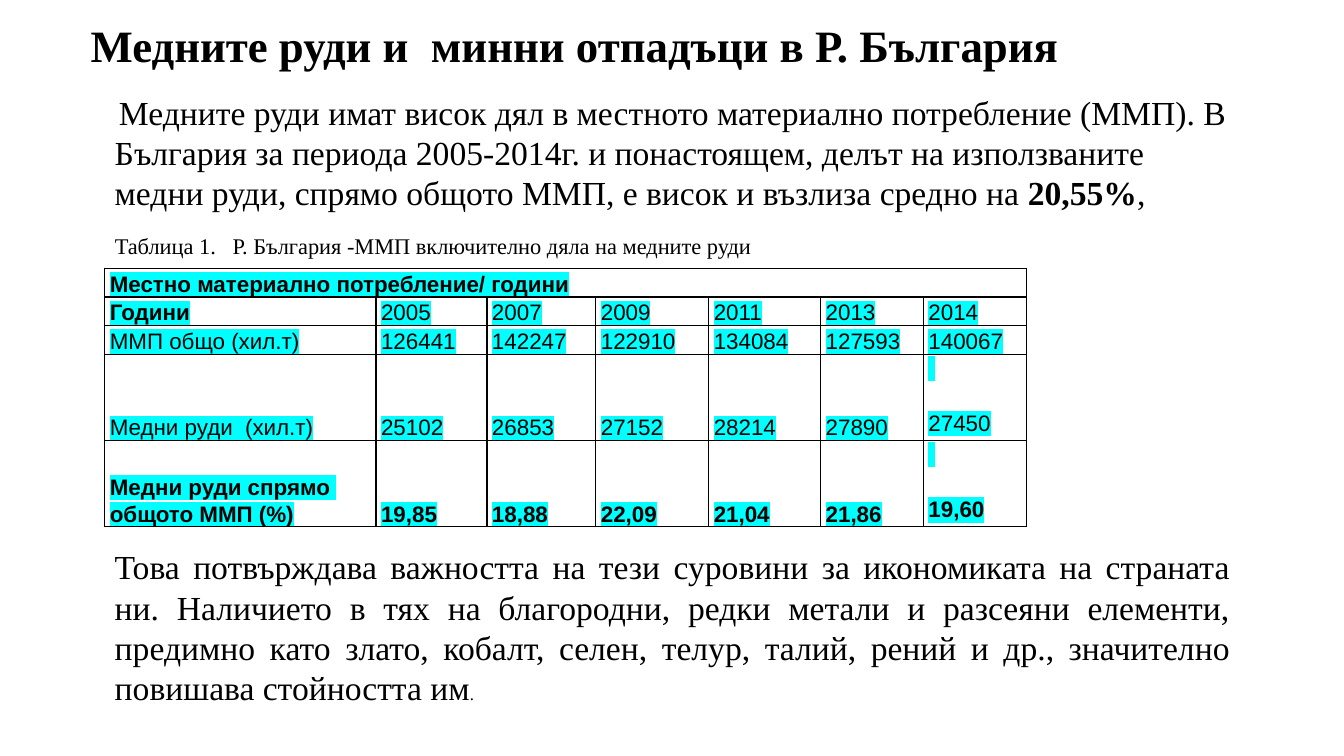
import pptx
import pptx.util
import pptx.dml.color
import pptx.enum.text
import pptx.oxml.ns
import lxml.etree

BLACK = pptx.dml.color.RGBColor(0, 0, 0)
CYAN = pptx.dml.color.RGBColor(0, 255, 255)
SERIF, SANS = "Times New Roman", "Arial"
ALIGN = pptx.enum.text.PP_ALIGN
ANCHOR = pptx.enum.text.MSO_ANCHOR
SIZING = pptx.enum.text.MSO_AUTO_SIZE
qn = pptx.oxml.ns.qn


def apply(item, form):
    for key, value in form.items():
        setattr(item, key, value)


def paint(parent, color):
    fill = lxml.etree.SubElement(parent, qn("a:solidFill"))
    lxml.etree.SubElement(fill, qn("a:srgbClr"), val=str(color))


class Deck:
    """Lengths are percent of the slide's width and height."""

    def __init__(self, wide, high):
        self.show = pptx.Presentation()
        self.show.slide_width = pptx.util.Inches(wide)
        self.show.slide_height = pptx.util.Inches(high)
        self.slide = self.show.slides.add_slide(self.show.slide_layouts[6])

    def x(self, share):
        return int(self.show.slide_width * share / 100)

    def y(self, share):
        return int(self.show.slide_height * share / 100)

    def box(self, left, top, wide, high):
        return self.x(left), self.y(top), self.x(wide), self.y(high)

    def run(self, para, text, size, font, bold=False, mark=None):
        run = para.add_run()
        run.text = text
        apply(run.font, {"size": pptx.util.Pt(size), "name": font, "bold": bold})
        run.font.color.rgb = BLACK
        if mark is not None:
            light = lxml.etree.Element(qn("a:highlight"))
            lxml.etree.SubElement(light, qn("a:srgbClr"), val=str(mark))
            run.font.fill  # the highlight must follow the text fill
            run._r.rPr.find(qn("a:solidFill")).addnext(light)

    def text(self, place, runs, frame=None, para=None):
        body = self.slide.shapes.add_textbox(*self.box(*place)).text_frame
        form = {"word_wrap": True, "auto_size": SIZING.SHAPE_TO_FIT_TEXT}
        apply(body, {**form, **(frame or {})})
        apply(body.paragraphs[0], para or {})
        for words, size, bold in runs:
            self.run(body.paragraphs[0], words, size, SERIF, bold)

    def cell(self, cell, lines, bold, para, anchor):
        side = pptx.util.Inches(0.05)
        apply(cell, {"margin_left": side, "margin_right": side, "margin_top": 0,
                     "margin_bottom": 0, "vertical_anchor": anchor})
        cell.fill.background()
        self.edge(cell)
        body = cell.text_frame
        for spot, words in enumerate(lines):
            part = body.add_paragraph() if spot else body.paragraphs[0]
            apply(part, {"line_spacing": 1.07, **para})
            if spot:
                part.space_before = pptx.util.Pt(20.5)
            self.run(part, words, 16, SANS, bold, CYAN)

    def edge(self, cell):
        props = cell._tc.get_or_add_tcPr()
        for spot, name in enumerate(("lnL", "lnR", "lnT", "lnB")):
            line = lxml.etree.Element(qn("a:" + name), w=str(pptx.util.Pt(1)))
            paint(line, BLACK)
            props.insert(spot, line)

    def table(self, place, cols, rows, data):
        grid = self.slide.shapes.add_table(len(rows), len(cols), *self.box(*place)).table
        apply(grid, {"first_row": False, "horz_banding": False})
        for col, wide in zip(grid.columns, cols):
            col.width = pptx.util.Inches(wide)
        for row, high in zip(grid.rows, rows):
            row.height = pptx.util.Inches(high)
        last = len(rows) - 1
        for r, values in enumerate(data):
            for c, value in enumerate(values):
                lines = value.split("\n") if value else []
                bold = r in (0, last) or (r == 1 and c == 0)
                para = {"alignment": ALIGN.JUSTIFY if c else ALIGN.LEFT}
                anchor = ANCHOR.TOP if len(lines) > 1 else ANCHOR.BOTTOM
                self.cell(grid.cell(r, c), lines, bold, para, anchor)
        grid.cell(0, 0).merge(grid.cell(0, len(cols) - 1))


def main():
    deck = Deck(13.33, 7.5)
    left, wide = 7.8, 84.47

    # Title
    deck.text((6, 2.27, 86.27, 8.27),
              [("Медните руди и  минни отпадъци в Р. България", 32, True)],
              {"vertical_anchor": ANCHOR.MIDDLE, "auto_size": SIZING.NONE},
              {"line_spacing": 0.9})

    # Opening text
    deck.text((left, 11.47, wide, 17.47), [
        (" ", 12, False),
        ("Медните руди имат висок дял в местното материално потребление (ММП). "
         "В България за периода 2005-2014г. и понастоящем, делът на използваните "
         "медни руди, спрямо общото ММП, е висок и възлиза средно на ", 24, False),
        ("20,55%", 24, True),
        (",", 24, False)])

    # Table with its caption
    deck.text((left, 30, 50.71, 4.93),
              [("Таблица 1.   Р. България -ММП включително дяла на медните руди",
                16, False)],
              {"word_wrap": False})
    deck.table((left, 35.47, 68.57, 32.8),
               [2.69, 1.1, 1.08, 1.12, 1.11, 1.02, 1.02],
               [0.23] * 3 + [0.73] * 2, [
        ["Местно материално потребление/ години"] + [""] * 6,
        ["Години", "2005", "2007", "2009", "2011", "2013", "2014"],
        ["ММП общо (хил.т)", "126441", "142247", "122910", "134084", "127593",
         "140067"],
        ["Медни руди  (хил.т)", "25102", "26853", "27152", "28214", "27890",
         " \n27450"],
        ["Медни руди спрямо  общото ММП (%)", "19,85", "18,88", "22,09", "21,04",
         "21,86", " \n19,60"]])

    # Closing text
    deck.text((left, 71.6, wide, 22.93), [
        ("Това потвърждава важността на тези суровини за икономиката на страната "
         "ни. Наличието в тях на благородни, редки метали и разсеяни елементи, "
         "предимно като злато, кобалт, селен, телур, талий, рений и др., "
         "значително повишава стойността им", 24, False),
        (". ", 12, False)], para={"alignment": ALIGN.JUSTIFY})

    deck.show.save("out.pptx")


if __name__ == "__main__":
    main()
